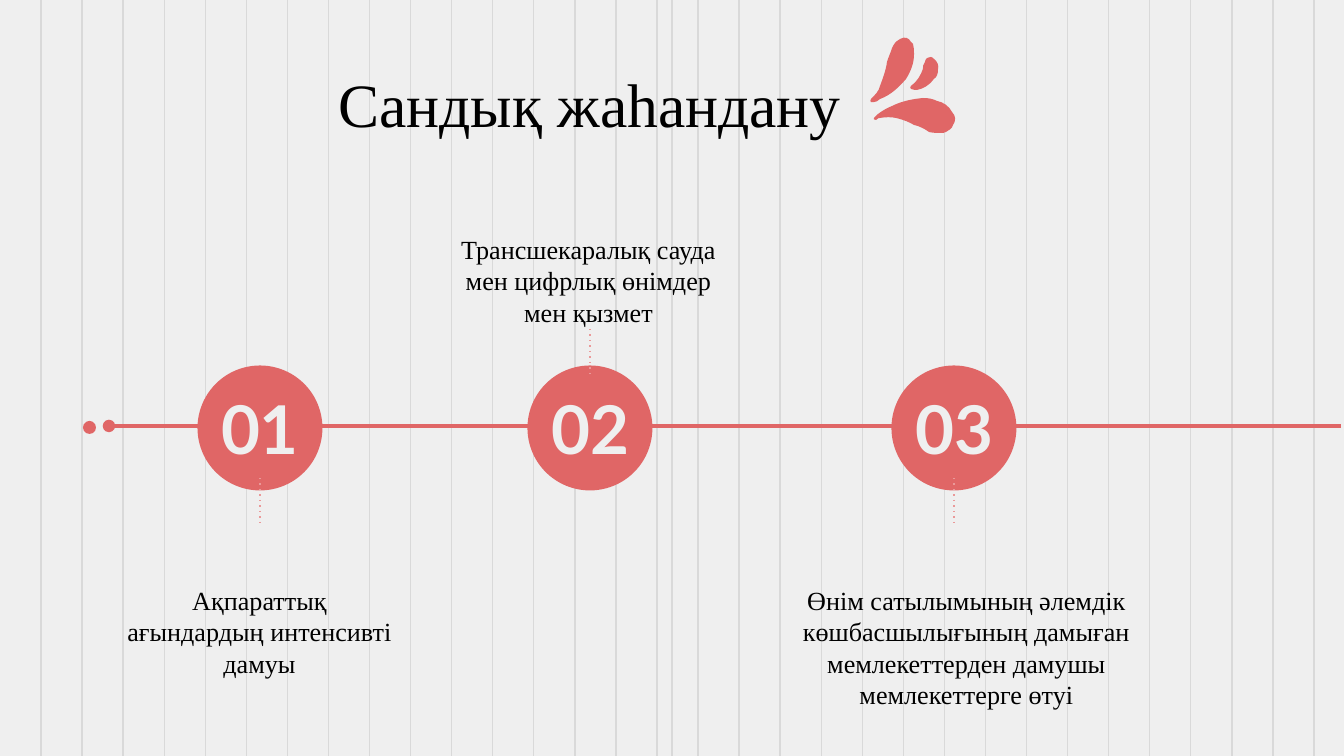
from dataclasses import dataclass

from lxml import etree
from pptx import Presentation
from pptx.dml.color import RGBColor
from pptx.enum.shapes import MSO_CONNECTOR, MSO_SHAPE
from pptx.enum.text import MSO_ANCHOR, MSO_AUTO_SIZE, PP_ALIGN
from pptx.oxml.ns import qn
from pptx.util import Emu, Inches, Pt

STRAIGHT = MSO_CONNECTOR.STRAIGHT
OVAL = MSO_SHAPE.OVAL
TOP, MIDDLE = MSO_ANCHOR.TOP, MSO_ANCHOR.MIDDLE
LEFT, CENTER = PP_ALIGN.LEFT, PP_ALIGN.CENTER
GROW = MSO_AUTO_SIZE.SHAPE_TO_FIT_TEXT


@dataclass(frozen=True)
class Theme:
    paper: str = "EFEFEF"
    stripe: str = "D9D9D9"
    accent: str = "E06666"
    tick: str = "EA9999"
    ink: str = "000000"
    serif: str = "Times New Roman"
    sans: str = "Lato"
    title: int = 33
    number: int = 36
    body: int = 14
    thin: float = 0.75
    thick: float = 2.25


T = Theme()
W, H = 1344, 756
EMU_PER_PX = 914400 / 134.4

TITLE = "Сандық жаһандану"
TITLE_BOX = (325, 52, 535, 85)
STEPS = [
    {"number": "01", "center": 260, "tick": (478, 525), "box": (109, 571, 301, 122),
     "text": "Ақпараттық ағындардың интенсивті дамуы"},
    {"number": "02", "center": 590, "tick": (329, 375), "box": (438, 220, 301, 122),
     "text": "Трансшекаралық сауда мен цифрлық өнімдер мен қызмет"},
    {"number": "03", "center": 954, "tick": (478, 525), "box": (746, 571, 441, 153),
     "text": "Өнім сатылымының әлемдік көшбасшылығының дамыған "
             "мемлекеттерден дамушы мемлекеттерге өтуі"},
]
STRIPES, LAST_STRIPE = 32, 1314
AXIS_Y, AXIS_X1, AXIS_X2 = 426, 109, 1341
DOT_BOX = (83, 421, 13, 13)
CIRCLE, CIRCLE_Y = 125, 428
NUMBER_W, NUMBER_H = 164, 133

PETALS = [
    ((911, 89), [
        (914, 90, 915, 90, 917, 90), (923, 89, 930, 85, 934, 79),
        (937, 77, 938, 74, 938, 70), (939, 66, 938, 62, 934, 59),
        (933, 58, 932, 57, 931, 57), (927, 58, 926, 58, 925, 62),
        (923, 65, 923, 66, 923, 69), (921, 75, 917, 82, 911, 86),
        (910, 87, 910, 88, 911, 89)]),
    ((946, 132), [
        (949, 130, 952, 129, 953, 125), (956, 121, 956, 116, 952, 112),
        (949, 106, 943, 102, 937, 101), (933, 99, 929, 98, 923, 98),
        (913, 99, 902, 101, 892, 106), (887, 108, 882, 111, 878, 114),
        (876, 116, 875, 117, 874, 118), (873, 119, 874, 120, 876, 120),
        (878, 118, 879, 118, 880, 118), (886, 117, 891, 117, 896, 118),
        (904, 120, 909, 122, 914, 125), (919, 126, 925, 129, 929, 132),
        (933, 133, 937, 133, 941, 133), (942, 133, 945, 133, 946, 132)]),
    ((880, 99), [
        (891, 95, 899, 87, 906, 79), (911, 71, 914, 63, 914, 54),
        (914, 51, 914, 47, 913, 44), (913, 43, 911, 43, 911, 42),
        (909, 38, 905, 36, 900, 39), (895, 42, 894, 44, 892, 48),
        (891, 52, 888, 58, 887, 62), (886, 70, 883, 78, 880, 86),
        (879, 91, 875, 95, 871, 99), (870, 100, 870, 102, 871, 102),
        (872, 102, 873, 102, 874, 102), (876, 102, 878, 101, 880, 99)]),
]


def px(value):
    return Emu(round(value * EMU_PER_PX))


def rgb(color):
    return RGBColor.from_string(color)


def add_line(shapes, x1, y1, x2, y2, color, width):
    line = shapes.add_connector(STRAIGHT, px(x1), px(y1), px(x2), px(y2))
    line.line.color.rgb = rgb(color)
    line.line.width = Pt(width)
    etree.SubElement(line._element.spPr, qn("a:effectLst"))
    return line


def style_line(line, tag, **attributes):
    ln = line._element.spPr.find(qn("a:ln"))
    etree.SubElement(ln, qn(tag), **attributes)


def paint(sp):
    sp.shadow.inherit = False
    sp.fill.solid()
    sp.fill.fore_color.rgb = rgb(T.accent)
    sp.line.fill.background()


def add_oval(shapes, box):
    paint(shapes.add_shape(OVAL, *map(px, box)))


def set_text(sp, text, font, size, color, align=CENTER, anchor=TOP, bold=False):
    tf = sp.text_frame
    tf.word_wrap = True
    tf.vertical_anchor = anchor
    tf.margin_left = tf.margin_right = tf.margin_top = tf.margin_bottom = Inches(0.1)
    p = tf.paragraphs[0]
    p.text = text
    p.alignment = align
    p.space_before = Pt(0)
    p.font.name = font
    p.font.size = Pt(size)
    p.font.bold = bold
    p.font.color.rgb = rgb(color)
    return tf


def add_petal(shapes, start, curves):
    builder = shapes.build_freeform(px(start[0]), px(start[1]))
    builder.add_line_segments([(px(c[4]), px(c[5])) for c in curves], close=True)
    sp = builder.convert_to_shape()
    paint(sp)
    segments = list(sp._element.iter(qn("a:lnTo")))
    for segment, curve in zip(segments, curves):
        bezier = etree.Element(qn("a:cubicBezTo"))
        for x, y in zip(curve[::2], curve[1::2]):
            etree.SubElement(bezier, qn("a:pt"), x=str(px(x) - sp.left), y=str(px(y) - sp.top))
        segment.getparent().replace(segment, bezier)


def main():
    prs = Presentation()
    prs.slide_width, prs.slide_height = px(W), px(H)
    layout = prs.slide_layouts[5]
    slide = prs.slides.add_slide(layout)
    slide.background.fill.solid()
    slide.background.fill.fore_color.rgb = rgb(T.paper)
    shapes = slide.shapes

    stripes = [LAST_STRIPE * i / STRIPES for i in range(1, STRIPES + 1)]
    for x in stripes + [W / 2]:
        stripe = add_line(shapes, x, 0, x, H, T.stripe, T.thin)
        layout.shapes._spTree.append(stripe._element)

    axis = add_line(shapes, AXIS_X1, AXIS_Y, AXIS_X2, AXIS_Y, T.accent, T.thick)
    style_line(axis, "a:headEnd", type="oval")

    title = shapes.title
    title.left, title.top, title.width, title.height = map(px, TITLE_BOX)
    set_text(title, TITLE, T.serif, T.title, T.ink, align=LEFT)
    add_oval(shapes, DOT_BOX)

    for step in STEPS:
        x = step["center"]
        add_oval(shapes, (x - CIRCLE / 2, CIRCLE_Y - CIRCLE / 2, CIRCLE, CIRCLE))
        number_box = (x - NUMBER_W / 2, CIRCLE_Y - NUMBER_H / 2, NUMBER_W, NUMBER_H)
        number = shapes.add_textbox(*map(px, number_box))
        set_text(number, step["number"], T.sans, T.number, T.paper, anchor=MIDDLE, bold=True)
        label = shapes.add_textbox(*map(px, step["box"]))
        set_text(label, step["text"], T.serif, T.body, T.ink).auto_size = GROW
        y1, y2 = step["tick"]
        tick = add_line(shapes, x, y1, x, y2, T.tick, T.thin)
        style_line(tick, "a:prstDash", val="dot")

    for start, curves in PETALS:
        add_petal(shapes, start, curves)

    prs.save("out.pptx")


if __name__ == "__main__":
    main()
